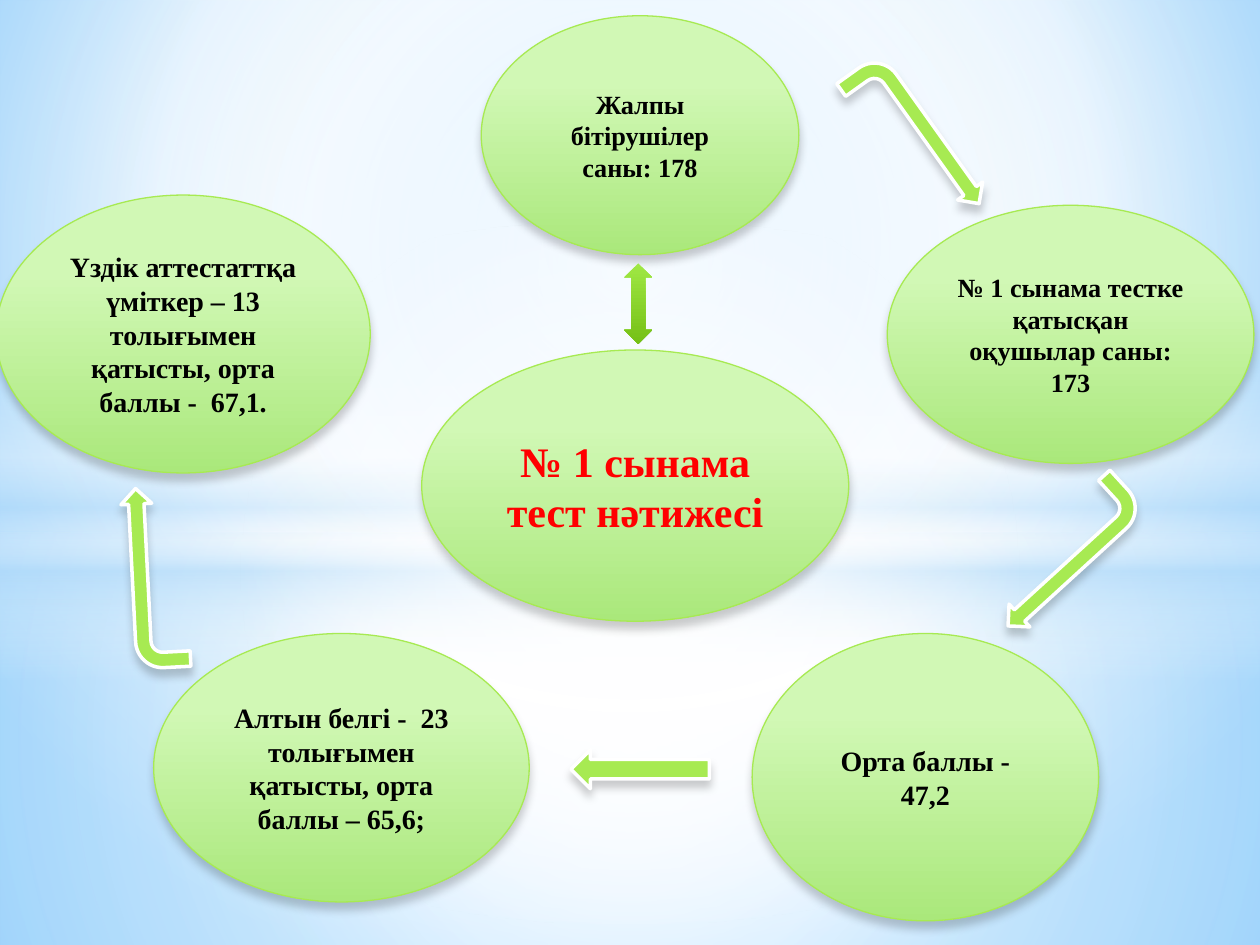
from lxml.etree import SubElement
from pptx import Presentation
from pptx.dml.color import RGBColor
from pptx.enum.shapes import MSO_SHAPE as Shape
from pptx.enum.text import MSO_ANCHOR as Anchor, PP_ALIGN as Align
from pptx.oxml.ns import qn
from pptx.util import Pt

W, H = 720, 540
FONT = "Times New Roman"
COLORS = {
    "white": "FFFFFF", "sky": "9ED5FF", "deep": "5BB9FF", "mist": "B4DCFA",
    "lime": "A7EA52", "pale": "D1F8B5", "leaf": "AAE87B",
    "bright": "A0E844", "moss": "75C016",
    "red": "FF0000", "black": "000000",
}

# Gradient stops: position %, colour, opacity %
SKY = [(0, "sky", 100), (60, "white", 100), (100, "deep", 100)]
BUBBLE = [(28, "pale", 100), (100, "leaf", 100)]
LINK = [(0, "bright", 100), (100, "moss", 100)]
CENTRE = (50, 50, 50, 50)

# Backdrop: shape, (left, top, width, height), stops, focus of a radial gradient
BACKDROP = [
    (Shape.RECTANGLE, (0, 304.5, W, 235.5),
     [(0, "white", 91), (37, "white", 76), (100, "mist", 79)], CENTRE),
    (Shape.RECTANGLE, (0, 0, W, 304.5),
     [(0, "white", 89), (48, "white", 62), (100, "mist", 79)], CENTRE),
    (Shape.RECTANGLE, (0, 209, W, 180),
     [(0, "white", 0), (29, "white", 30), (45, "mist", 40),
      (55, "white", 26), (65, "mist", 60), (100, "white", 0)], None),
    (Shape.OVAL, (0, 126, W, 402), [(0, "white", 100), (54, "white", 0)], CENTRE),
]

# Bubbles: text, box, font size, font colour
BUBBLES = [
    ("№ 1 сынама тест нәтижесі", (241, 200, 244, 155), 24, "red"),
    ("Жалпы бітірушілер саны: 178", (275, 9, 181.5, 136.5), 15, "black"),
    ("№ 1 сынама тестке қатысқан оқушылар саны: 173",
     (507, 117.3, 209.5, 147.5), 15, "black"),
    ("Үздік аттестаттқа үміткер – 13 толығымен қатысты, орта баллы -  67,1.",
     (-2.2, 111.5, 213.8, 158.8), 16, "black"),
    ("Алтын белгі -  23 толығымен қатысты, орта баллы – 65,6;",
     (87.8, 362, 214.6, 153.4), 16, "black"),
    ("Орта баллы - 47,2", (429.8, 362, 198, 164.2), 16, "black"),
]

# Arrows round the circle: shape, box, rotation
BENT = (103, 35.3)
ARROWS = [
    (Shape.BENT_ARROW, (470.9, 61.9, *BENT), 54.5),
    (Shape.BENT_ARROW, (37.4, 312.5, *BENT), 267.1),
    (Shape.BENT_ARROW, (556.6, 298.8, *BENT), 137.6),
    (Shape.LEFT_ARROW, (326.2, 428.4, 79.2, 22.3), 0),
]


def rgb(name):
    return RGBColor.from_string(COLORS[name])


def add_color(parent, name, opacity):
    color = SubElement(parent, qn("a:srgbClr"), val=COLORS[name])
    if opacity < 100:
        SubElement(color, qn("a:alpha"), val=str(opacity * 1000))


def set_gradient(fill, root, stops, focus=None):
    """Radial towards focus (left, top, right, bottom %), else top to bottom."""
    fill.gradient()
    grad = root.find(".//" + qn("a:gradFill"))
    for child in list(grad):
        grad.remove(child)
    gs_list = SubElement(grad, qn("a:gsLst"))
    for pos, name, opacity in stops:
        add_color(SubElement(gs_list, qn("a:gs"), pos=str(pos * 1000)), name, opacity)
    if focus:
        radial = SubElement(grad, qn("a:path"), path="circle")
        sides = {side: str(v * 1000) for side, v in zip("ltrb", focus)}
        SubElement(radial, qn("a:fillToRect"), **sides)
    else:
        SubElement(grad, qn("a:lin"), ang="5400000", scaled="0")


def add_shape(slide, kind, box, stops=None, focus=None, fill=None, line=None,
              line_width=0.75, shadow=False, rotation=0):
    s = slide.shapes.add_shape(kind, *(Pt(v) for v in box))
    s.rotation = rotation
    if stops:
        set_gradient(s.fill, s._element.spPr, stops, focus)
    else:
        s.fill.solid()
        s.fill.fore_color.rgb = rgb(fill)
    if line:
        s.line.color.rgb = rgb(line)
        s.line.width = Pt(line_width)
    else:
        s.line.fill.background()
    s.shadow.inherit = False
    if shadow:
        effects = s._element.spPr.find(qn("a:effectLst"))
        outer = SubElement(effects, qn("a:outerShdw"), blurRad=str(Pt(5)),
                           dist=str(Pt(4)), dir="5400000", rotWithShape="0")
        add_color(outer, "black", 20)
    return s


def set_text(s, text, size, color, bold=True):
    tf = s.text_frame
    tf.word_wrap = True
    tf.vertical_anchor = Anchor.MIDDLE
    p = tf.paragraphs[0]
    p.alignment = Align.CENTER
    r = p.add_run()
    r.text = text
    r.font.name, r.font.size, r.font.bold = FONT, Pt(size), bold
    r.font.color.rgb = rgb(color)


def main():
    prs = Presentation()
    prs.slide_width, prs.slide_height = Pt(W), Pt(H)
    slide = prs.slides.add_slide(prs.slide_layouts[6])
    set_gradient(slide.background.fill, slide._element, SKY, (20, 10, 20, 60))
    for kind, box, stops, focus in BACKDROP:
        add_shape(slide, kind, box, stops=stops, focus=focus)
    for text, box, size, color in BUBBLES:
        s = add_shape(slide, Shape.OVAL, box, stops=BUBBLE, line="lime", shadow=True)
        set_text(s, text, size=size, color=color)
    add_shape(slide, Shape.UP_DOWN_ARROW, (356.8, 150.5, 16, 46), stops=LINK)
    for kind, box, rotation in ARROWS:
        add_shape(slide, kind, box, fill="lime", line="white", line_width=2,
                  shadow=True, rotation=rotation)
    prs.save("out.pptx")


if __name__ == "__main__":
    main()
